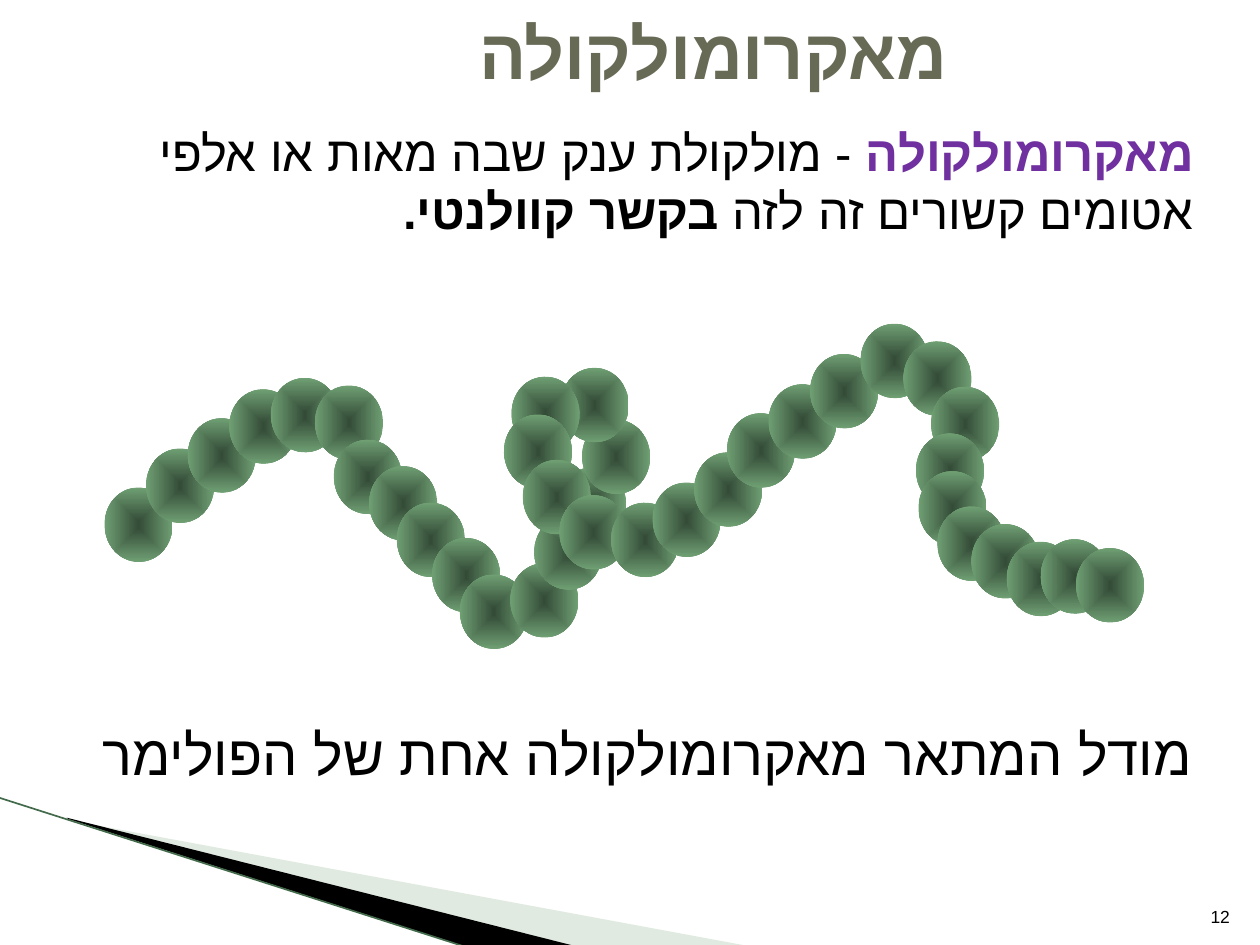
from lxml import etree
from pptx import Presentation
from pptx import util as u
from pptx.dml.color import RGBColor
from pptx.enum import shapes, text
from pptx.oxml import parse_xml
from pptx.oxml.ns import nsdecls, qn

# The slide is a grid of 1000 columns by 750 rows; all places are in cells.
COLUMNS, ROWS = 1000, 750
CELL = u.Inches(10) // COLUMNS
FONT = "DejaVu Sans Mono"
HEBREW_FONT = "Liberation Sans"

BLACK = RGBColor(0x00, 0x00, 0x00)
OLIVE = RGBColor(0x67, 0x6A, 0x55)
PURPLE = RGBColor(0x70, 0x30, 0xA0)
PALE_GREEN = RGBColor(0xB3, 0xCB, 0xB5)
EDGE_GREEN = RGBColor(0x43, 0x6B, 0x4B)
BEAD_CENTRE = RGBColor(0x34, 0x4C, 0x37)
BEAD_RIM = RGBColor(0x72, 0xA3, 0x76)

TITLE = [("מאקרומולקולה", OLIVE, True)]
DEFINITION = [
    ("מאקרומולקולה ", PURPLE, True),
    ("- מולקולת ענק שבה מאות או אלפי אטומים קשורים זה לזה ", BLACK, False),
    ("בקשר קוולנטי.", BLACK, True),
]
CAPTION = [("מודל המתאר מאקרומולקולה אחת של הפולימר", BLACK, False)]
PAGE_NUMBER = [("12", BLACK, False)]

# Left and top of each bead along the chain
BEADS = [
    (83, 387), (116, 356), (149, 332), (182, 309), (215, 300), (250, 306),
    (265, 349), (293, 370), (315, 399), (343, 427), (365, 456), (405, 447),
    (424, 409), (443, 371), (462, 333), (445, 292), (406, 299), (400, 329),
    (415, 365), (444, 393), (485, 399), (518, 383), (551, 359), (577, 328),
    (610, 305), (643, 281), (683, 257), (717, 271), (739, 307), (727, 344),
    (729, 374), (744, 402), (771, 416), (799, 430), (826, 428), (854, 435),
]
BEAD_SIZE = (54, 59)
BEAD_TURN = 357.5

# Outline, colour and opacity in percent
WEDGES = [
    ([(55, 651), (595, 751), (456, 751), (55, 650)], PALE_GREEN, 40),
    ([(53, 649), (457, 751), (372, 752), (54, 650)], BLACK, 100),
]
EDGE = (-1, 633, 371, 752)


def cells(*values):
    return [value * CELL for value in values]


def add_wedge(page, points, color, opacity):
    builder = page.shapes.build_freeform(*points[0], scale=CELL)
    builder.add_line_segments(points[1:], close=True)
    wedge = builder.convert_to_shape()
    wedge.shadow.inherit = False
    wedge.fill.solid()
    wedge.fill.fore_color.rgb = color
    wedge.line.fill.background()
    if opacity < 100:
        tint = wedge.fill._xPr.find(".//" + qn("a:srgbClr"))
        etree.SubElement(tint, qn("a:alpha"), val=str(opacity * 1000))


def add_edge(page):
    edge = page.shapes.add_connector(shapes.MSO_CONNECTOR.STRAIGHT, *cells(*EDGE))
    edge.line.color.rgb = EDGE_GREEN
    edge.line.width = u.Pt(0.95)
    etree.SubElement(edge._element.spPr, qn("a:effectLst"))


def add_bead(chain, left, top):
    """Add an ellipse shaded from a dark centre to a lighter rim."""
    bead = chain.shapes.add_shape(
        shapes.MSO_SHAPE.OVAL, *cells(left, top, *BEAD_SIZE))
    bead.rotation = BEAD_TURN
    bead.shadow.inherit = False
    bead.line.fill.background()
    bead._element.spPr.find(qn("a:prstGeom")).addnext(parse_xml(
        f'<a:gradFill {nsdecls("a")} rotWithShape="1"><a:gsLst>'
        f'<a:gs pos="0"><a:srgbClr val="{BEAD_CENTRE}"/></a:gs>'
        f'<a:gs pos="100000"><a:srgbClr val="{BEAD_RIM}"/></a:gs></a:gsLst>'
        '<a:path path="shape"><a:fillToRect l="50000" t="50000" r="50000"'
        ' b="50000"/></a:path></a:gradFill>'))


def add_text(page, spans, at, size, align=text.PP_ALIGN.RIGHT,
             anchor=text.MSO_ANCHOR.TOP):
    """Add one right-to-left paragraph made of (words, colour, bold) spans."""
    frame = page.shapes.add_textbox(*cells(*at)).text_frame
    frame.word_wrap = True
    frame.vertical_anchor = anchor
    para = frame.paragraphs[0]
    para.alignment = align
    para._p.get_or_add_pPr().set("rtl", "1")
    for words, color, bold in spans:
        span = para.add_run()
        span.text = words
        span.font.name = FONT
        span.font.size = u.Pt(size)
        span.font.bold = bold
        span.font.color.rgb = color
        etree.SubElement(span.font._element, qn("a:cs"), typeface=HEBREW_FONT)


def main():
    deck = Presentation()
    deck.slide_width, deck.slide_height = cells(COLUMNS, ROWS)
    page = deck.slides.add_slide(deck.slide_layouts[6])

    for wedge in WEDGES:
        add_wedge(page, *wedge)
    add_edge(page)

    add_text(page, DEFINITION, (42, 92, 915, 105), 28)
    add_text(page, CAPTION, (42, 566, 915, 64), 32)
    add_text(page, TITLE, (305, 13, 522, 55), 40,
             align=text.PP_ALIGN.CENTER, anchor=text.MSO_ANCHOR.MIDDLE)

    chain = page.shapes.add_group_shape()
    for left, top in BEADS:
        add_bead(chain, left, top)

    add_text(page, PAGE_NUMBER, (946, 701, 40, 40), 10,
             anchor=text.MSO_ANCHOR.BOTTOM)
    deck.save("out.pptx")


if __name__ == "__main__":
    main()
